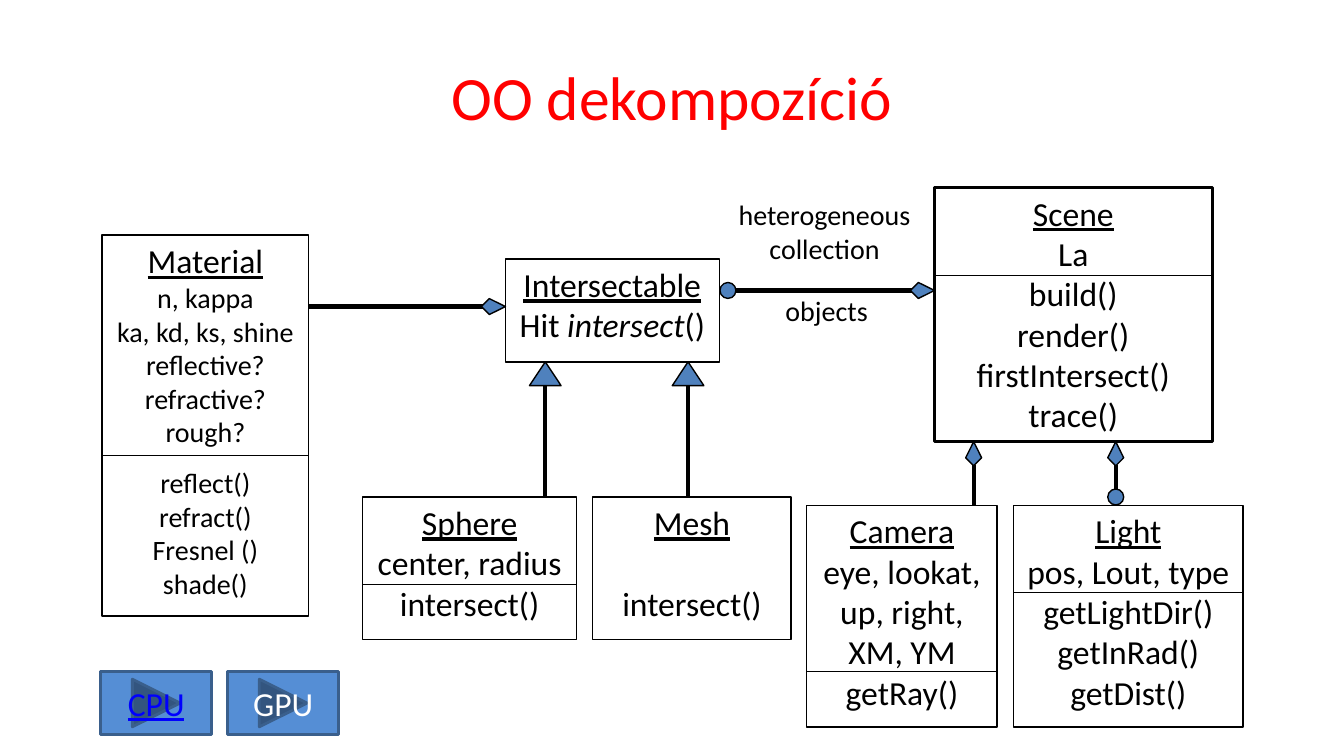
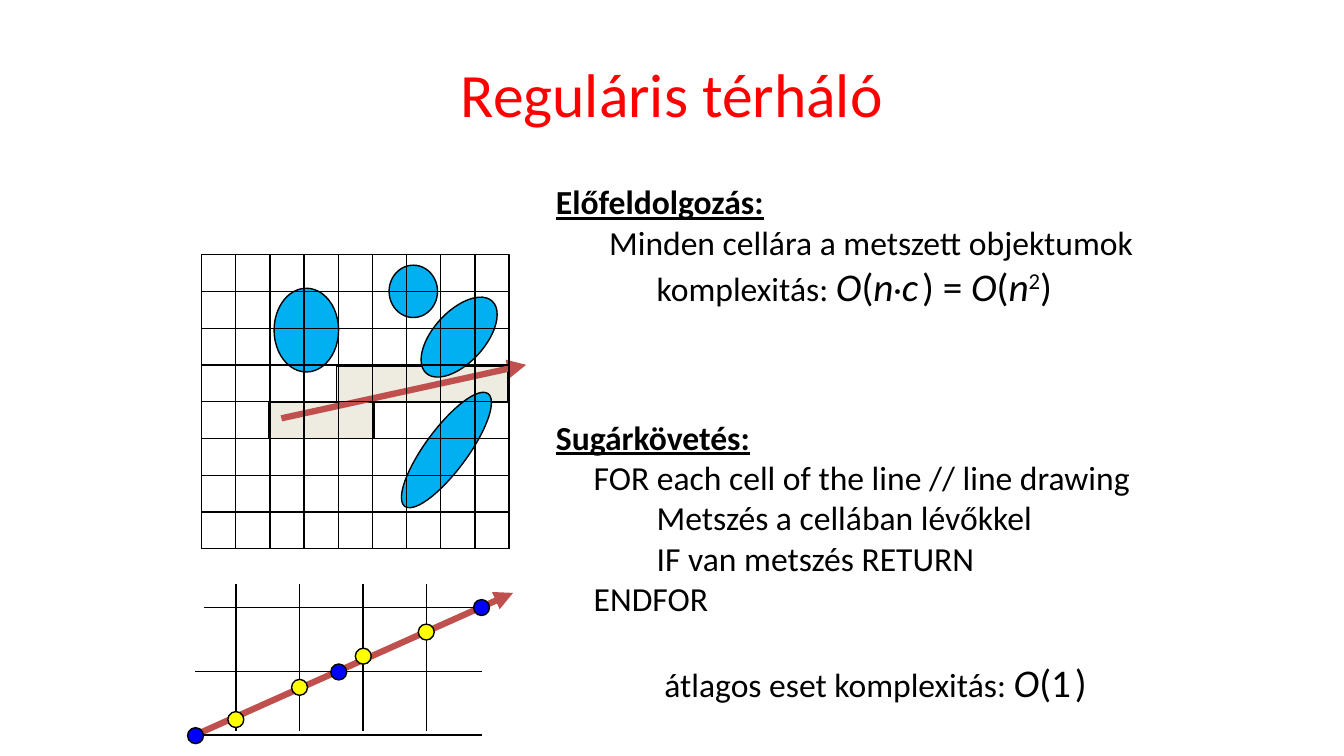
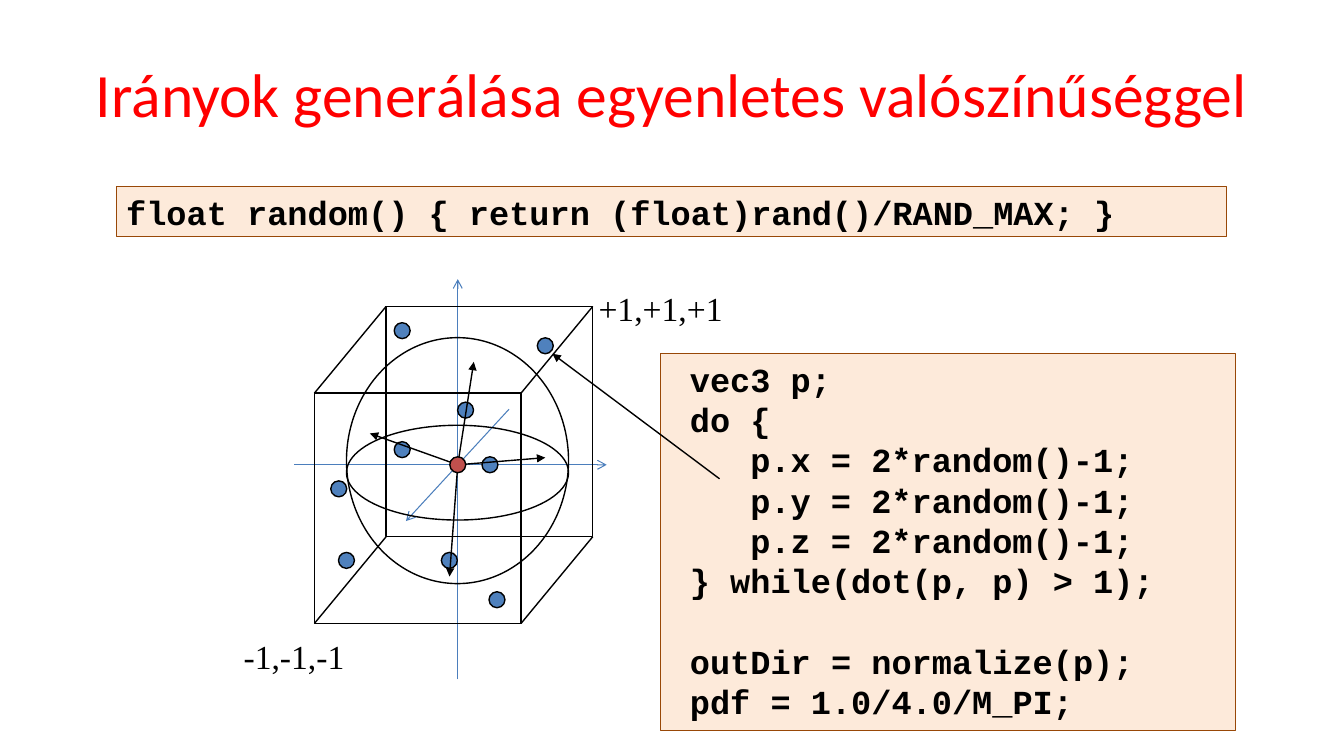
from pptx import Presentation
from pptx.dml.color import RGBColor
from pptx.enum.shapes import MSO_CONNECTOR as Connector, MSO_SHAPE as Preset
from pptx.enum.text import MSO_ANCHOR as Anchor, PP_ALIGN as Align
from pptx.oxml.ns import qn
from pptx.util import Pt
from lxml.etree import SubElement

COLORS = {
    "title": "FF0000", "ink": "000000", "white": "FFFFFF", "link": "0000FF",
    "marker": "4F81BD", "button": "558ED5", "button_edge": "3A5F8C",
    "ray": "C0504D", "cell": "EEECE1", "object": "00B0F0",
    "yellow": "FFFF00", "axis": "4B7EBC", "code": "FDEADA", "code_edge": "984807",
}
DOT = 11.4

BODY = {"name": "Calibri", "size": Pt(24), "color": "ink"}
SMALL = {**BODY, "size": Pt(20)}
TITLE = {"name": "Calibri", "size": Pt(44), "color": "title"}
CODE = {"name": "Courier New", "size": Pt(24), "bold": True, "color": "ink"}
CORNER = {"name": "Times New Roman", "size": Pt(24), "color": "ink"}
HEAD = {"underline": True}
SECTION = {"underline": True, "bold": True}
BIG = {"size": Pt(28)}
BIG_ITALIC = {"size": Pt(28), "italic": True}
THIN_SPACE = {"size": Pt(12), "italic": True}

CLASSES = [
    ("Scene", (667.4, 134, 198.5, 181.5), 2.25, 196.5, BODY,
     ["La", "build()", "render()", "firstIntersect()", "trace()"]),
    ("Intersectable", (361, 185, 152.8, 73.5), 1, None, BODY,
     [[("Hit", {}), (" intersect", {"italic": True}), ("()", {})]]),
    ("Camera", (576.3, 361, 136, 158.4), 1, 479.5, BODY,
     ["eye, lookat, up, right, XM, YM", "getRay()"]),
    ("Light", (724, 361, 164, 158.4), 1, 423.5, BODY,
     ["pos, Lout, type", "getLightDir()", "getInRad()", "getDist()"]),
    ("Sphere", (259, 355, 153, 102), 1, 417.5, BODY,
     ["center, radius", "intersect()"]),
    ("Mesh", (423.4, 355, 141.8, 102), 1, None, BODY,
     [("intersect()", 0, 29.3)]),
    ("Material", (73, 168, 147.5, 272), 1, 325.5, SMALL,
     ["n, kappa", "ka, kd, ks, shine", "reflective?", "refractive?", "rough?",
      ("reflect()", 0, 12.2), "refract()", "Fresnel ()", "shade()"]),
]
INHERITANCE = [(389.5, 355), (491.5, 355)]
AGGREGATIONS = [
    ((525.5, 207.5), (667.5, 207.5)),
    ((220.5, 219), (361, 219)),
    ((797, 355), (797, 315.5)),
    ((695.5, 361), (695.5, 315.5)),
]
MANY_ENDS = [(520, 207.5), (797, 355)]
RELATION_LABELS = [
    ((520, 137.5, 138, 55.5), ["heterogeneous", "collection"]),
    ((553.5, 206, 74, 31.5), ["objects"]),
]
BUTTONS = [("GPU", 162.7, {"color": "white"}),
           ("CPU", 72, {"color": "link", "underline": True})]

PREPROCESSING = [
    [("Előfeldolgozás:", SECTION)],
    ("Minden cellára a metszett objektumok", 38, 0),
    ([("komplexitás: ", {}), ("O", BIG_ITALIC), ("(", BIG), ("n", BIG_ITALIC),
      ("·", {}), ("c", BIG_ITALIC), (" ", THIN_SPACE), (") = ", BIG),
      ("O", BIG_ITALIC), ("(", BIG), ("n", BIG_ITALIC),
      ("2", {**BIG, "baseline": 30000}), (")", BIG)], 72, 0),
]
TRACING = [
    [("Sugárkövetés:", SECTION)],
    ("FOR each cell of the line // line drawing", 27, 0),
    ("Metszés a cellában lévőkkel", 72, 0),
    ("IF van metszés RETURN", 72, 0),
    ("ENDFOR", 27, 0),
    ([("átlagos eset komplexitás: ", {}), ("O", BIG_ITALIC), ("(1", BIG),
      (" ", THIN_SPACE), (")", BIG)], 77.5, 28.8),
]
VISITED_CELLS = [(240.5, 261.4, 122.4, 26), (192.2, 287.3, 75, 26)]
OBJECTS = [
    ((303.8, 271.4, 30.2, 100.1), 36.5), ((277.9, 189.4, 34.6, 37.4), 0),
    ((195.8, 205.9, 46.1, 59.8), 0), ((309.6, 205.9, 36.7, 69.8), 42.5),
]
GRID_LEFT, GRID_TOP, CELL_WIDTH, CELL_HEIGHT = 144, 182, 24.4, 26.25
GRID_COLUMNS, GRID_ROWS = 9, 8
LEVELS = [(139.5, 525), (139.5, 479.5), (145.5, 434)]
CROSSINGS = {
    "yellow": [(168.5, 514), (214, 491), (259.5, 468.7), (304.5, 451.5)],
    "link": [(139.7, 525.5), (242, 480), (344, 434)],
}

RANDOM_CODE = ["float random() { return (float)rand()/RAND_MAX; }"]
SAMPLE_CODE = [
    ("vec3 p;", 0), ("do {", 0), ("p.x = 2*random()-1;", 3),
    ("p.y = 2*random()-1;", 3), ("p.z = 2*random()-1;", 3),
    ("} while(dot(p, p) > 1);", 0), ("outDir = normalize(p);", 0),
    ("pdf = 1.0/4.0/M_PI;", 0),
]
AXES = [((363.6, 292.3), (290, 372.2)), ((210.2, 332), (433.4, 332)),
        ((327, 485.3), (327, 199.4))]
CUBE_FRONT, CUBE_BACK, CUBE_SIZE = (224.6, 280.8), (275.8, 218.9), (147.6, 164.5)
SPHERE_OUTLINES = [(247.5, 241.2, 158.6, 175.7), (247.5, 303.8, 158.6, 67.7)]
SAMPLES = [(247.5, 400.3), (242, 349.2), (287.3, 321.2), (332.6, 293), (389.5, 247),
           (350, 332), (321, 400.3), (355, 428.4), (287.3, 236.2)]
CENTER = (327, 332)
DIRECTIONS = [(338.4, 258.5), (389.5, 326.9), (321.1, 411.8), (264.2, 309.6)]
CORNERS = [("-1,-1,-1", (167, 450.7, 86.4, 36)), ("+1,+1,+1", (420.5, 202.3, 103, 36))]


def rgb(name):
    return RGBColor.from_string(COLORS[name])


def points(values):
    return [Pt(value) for value in values]


def write(box, rows, base, align=Align.LEFT, anchor=Anchor.TOP, wrap=True):
    frame = box.text_frame
    frame.word_wrap = wrap
    frame.vertical_anchor = anchor
    for index, row in enumerate(rows):
        spans, indent, before = row if isinstance(row, tuple) else (row, 0, 0)
        para = frame.paragraphs[0] if index == 0 else frame.add_paragraph()
        para.alignment = align
        para.space_before = Pt(before)
        if indent:
            para._p.get_or_add_pPr().set("marL", str(Pt(indent)))
        for text, changes in [(spans, {})] if isinstance(spans, str) else spans:
            span = para.add_run()
            span.text = text
            for key, value in {**base, **changes}.items():
                if key == "color":
                    span.font.color.rgb = rgb(value)
                elif key == "baseline":
                    span._r.get_or_add_rPr().set(key, str(value))
                else:
                    setattr(span.font, key, value)


def paint(shape, fill=None, line="ink", width=1):
    shape.shadow.inherit = False
    if fill:
        shape.fill.solid()
        shape.fill.fore_color.rgb = rgb(fill)
    else:
        shape.fill.background()
    shape.line.color.rgb = rgb(line)
    shape.line.width = Pt(width)
    return shape


def add_preset(page, preset, area, **style):
    return paint(page.shapes.add_shape(preset, *points(area)), **style)


def add_dot(page, center, fill):
    x, y = center
    add_preset(page, Preset.OVAL, (x - DOT / 2, y - DOT / 2, DOT, DOT), fill=fill)


def add_polygon(page, corners):
    corners = [points(corner) for corner in corners]
    builder = page.shapes.build_freeform(*corners[0])
    builder.add_line_segments(corners[1:], close=True)
    paint(builder.convert_to_shape(), fill="marker")


def add_line(page, start, end, color="ink", width=1, head=None):
    line = page.shapes.add_connector(Connector.STRAIGHT, *points(start + end))
    line.line.color.rgb = rgb(color)
    line.line.width = Pt(width)
    if head:
        SubElement(line.line._get_or_add_ln(), qn("a:tailEnd")).set("type", head)
    SubElement(line._element.spPr, qn("a:effectLst"))


def add_text(page, area, rows, base, **layout):
    write(page.shapes.add_textbox(*points(area)), rows, base, **layout)


def add_page(deck, title, area=(48, 21.6, 864, 90)):
    page = deck.slides.add_slide(deck.slide_layouts[5])
    box = page.shapes.title
    box.left, box.top, box.width, box.height = points(area)
    write(box, [title], TITLE, Align.CENTER, Anchor.MIDDLE)
    return page


def add_aggregation(page, start, tip):
    x, y = tip
    if start[1] == y:
        neck = (x - 11.5, y)
        kite = [tip, (x - 11.5, y - 5.7), (x - 17.2, y), (x - 11.5, y + 5.7)]
    else:
        neck = (x, y + 17)
        kite = [tip, (x - 5.7, y + 11.5), (x, y + 17.2), (x + 5.7, y + 11.5)]
    add_line(page, start, neck, width=3)
    add_polygon(page, kite)


def build_classes(deck):
    page = add_page(deck, "OO dekompozíció", (26.6, 23.4, 907, 90))
    for name, area, width, divider, base, members in CLASSES:
        box = add_preset(page, Preset.RECTANGLE, area, width=width)
        heading = [(name, {**HEAD, "size": Pt(24)})]
        write(box, [heading] + members, base, Align.CENTER)
        if divider:
            left, right = area[0], area[0] + area[2]
            add_line(page, (left, divider), (right, divider), width=0.75)
    for x, bottom in INHERITANCE:
        add_line(page, (x, bottom), (x, 275.5), width=3)
        add_polygon(page, [(x - 11.3, 275.5), (x, 258.5), (x + 11.3, 275.5)])
    for start, tip in AGGREGATIONS:
        add_aggregation(page, start, tip)
    for center in MANY_ENDS:
        add_dot(page, center, "marker")
    for area, rows in RELATION_LABELS:
        add_text(page, area, rows, SMALL, align=Align.CENTER, wrap=False)
    for name, left, changes in BUTTONS:
        button = add_preset(page, Preset.ACTION_BUTTON_FORWARD_OR_NEXT,
                            (left, 479.5, 79.2, 45.4),
                            fill="button", line="button_edge", width=2)
        write(button, [name], {**BODY, **changes}, Align.CENTER, Anchor.MIDDLE)


def build_grid(deck):
    page = add_page(deck, "Reguláris térháló")
    for area in VISITED_CELLS:
        add_preset(page, Preset.RECTANGLE, area, fill="cell")
    add_line(page, (201, 298.8), (375.8, 260.6), "ray", 4.5, "triangle")
    for area, angle in OBJECTS:
        add_preset(page, Preset.OVAL, area, fill="object").rotation = angle
    width, height = GRID_COLUMNS * CELL_WIDTH, GRID_ROWS * CELL_HEIGHT
    for column in range(0, GRID_COLUMNS, 2):
        left = GRID_LEFT + column * CELL_WIDTH
        add_preset(page, Preset.RECTANGLE, (left, GRID_TOP, CELL_WIDTH, height))
    for row in range(1, GRID_ROWS, 2):
        top = GRID_TOP + row * CELL_HEIGHT
        add_preset(page, Preset.RECTANGLE, (GRID_LEFT, top, width, CELL_HEIGHT))
    add_line(page, (GRID_LEFT, GRID_TOP), (GRID_LEFT + width, GRID_TOP))
    add_text(page, (390, 126, 450, 143), PREPROCESSING, BODY)
    add_text(page, (390, 294, 450, 215), TRACING, BODY)
    for column in range(4):
        x = 168.5 + column * 45.4
        add_line(page, (x, 417.5), (x, 522.5))
    add_line(page, (139.5, 525), (366.5, 423.5), "ray", 4.5, "triangle")
    for left, y in LEVELS:
        add_line(page, (left, y), (left + 204.5, y))
    for color, centers in CROSSINGS.items():
        for center in centers:
            add_dot(page, center, color)


def build_directions(deck):
    page = add_page(deck, "Irányok generálása egyenletes valószínűséggel")
    for start, end in AXES:
        add_line(page, start, end, "axis", 0.75, "arrow")
    for corner in (CUBE_FRONT, CUBE_BACK):
        add_preset(page, Preset.RECTANGLE, corner + CUBE_SIZE)
    for right in (0, CUBE_SIZE[0]):
        for down in (0, CUBE_SIZE[1]):
            add_line(page, (CUBE_FRONT[0] + right, CUBE_FRONT[1] + down),
                     (CUBE_BACK[0] + right, CUBE_BACK[1] + down))
    for area in SPHERE_OUTLINES:
        add_preset(page, Preset.OVAL, area)
    for center in SAMPLES:
        add_dot(page, center, "marker")
    for text, area in CORNERS:
        add_text(page, area, [text], CORNER, wrap=False)
    sample_rows = [
        (text, 13.7 + 14.4 * depth, 28.7 if text.startswith("outDir") else 0)
        for text, depth in SAMPLE_CODE
    ]
    for area, rows, anchor in [
        ((83, 133.2, 793.4, 36), RANDOM_CODE, Anchor.MIDDLE),
        ((472, 252.7, 410.4, 269.3), sample_rows, Anchor.TOP),
    ]:
        box = add_preset(page, Preset.RECTANGLE, area,
                         fill="code", line="code_edge", width=0.75)
        write(box, rows, CODE, anchor=anchor)
    for end in DIRECTIONS:
        add_line(page, CENTER, end, head="triangle")
    add_line(page, (514, 342), (394.6, 252.7), head="triangle")
    add_dot(page, CENTER, "ray")


def main():
    deck = Presentation()
    deck.slide_width, deck.slide_height = Pt(960), Pt(540)
    for build in (build_classes, build_grid, build_directions):
        build(deck)
    deck.save("out.pptx")


if __name__ == "__main__":
    main()
